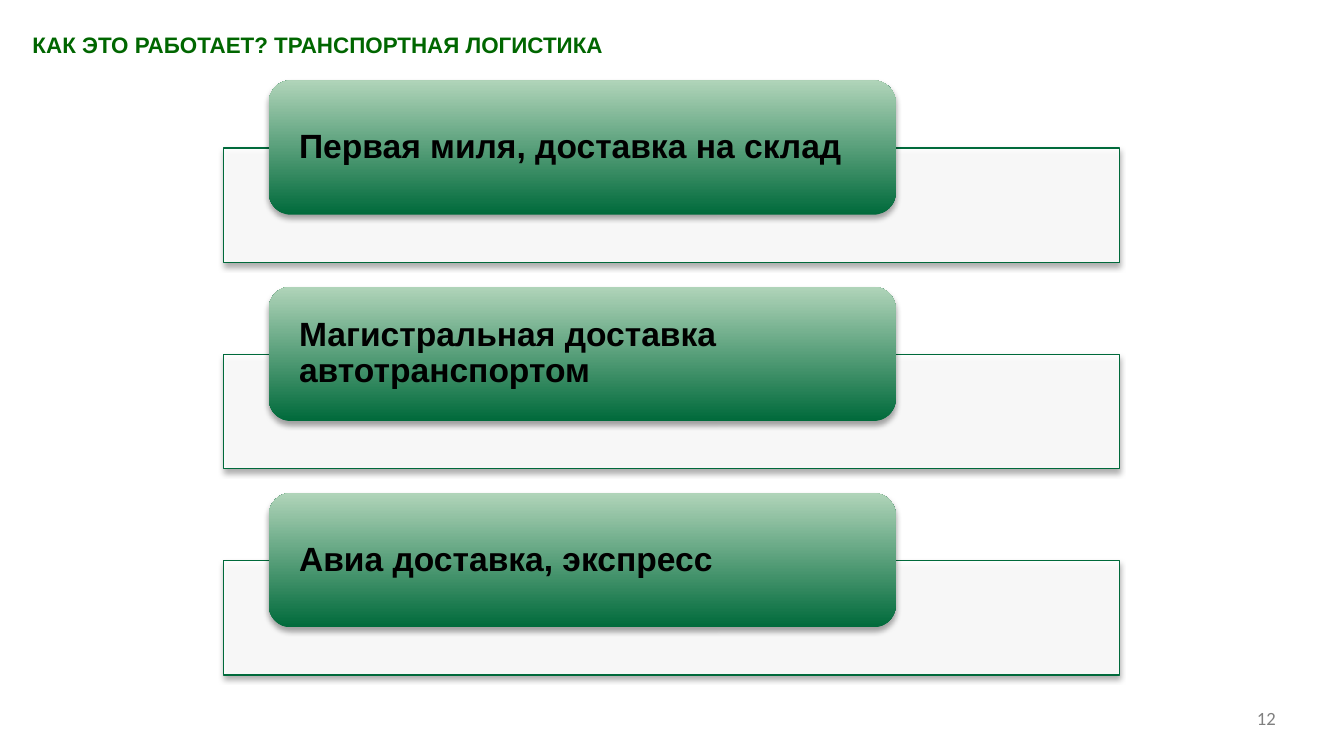
from lxml import etree
from pptx import Presentation
from pptx.dml.color import RGBColor
from pptx.enum.shapes import MSO_SHAPE
from pptx.enum.text import MSO_ANCHOR, MSO_AUTO_SIZE, PP_ALIGN
from pptx.oxml.ns import qn
from pptx.util import Cm, Pt

RECT, ROUND = MSO_SHAPE.RECTANGLE, MSO_SHAPE.ROUNDED_RECTANGLE
LEFT, RIGHT = PP_ALIGN.LEFT, PP_ALIGN.RIGHT
TOP, MIDDLE = MSO_ANCHOR.TOP, MSO_ANCHOR.MIDDLE
FIXED = MSO_AUTO_SIZE.NONE

TITLE = "КАК ЭТО РАБОТАЕТ? ТРАНСПОРТНАЯ ЛОГИСТИКА"
STEPS = [
    "Первая миля, доставка на склад",
    "Магистральная доставка автотранспортом",
    "Авиа доставка, экспресс",
]
PAGE = "12"

THEME = {
    "font": "Arial", "page_font": "Calibri",
    "title": "006600", "dark": "006A3B", "light": "B0D4B9",
    "panel": "FFFFFF", "ink": "000000", "page": "808080",
    "title_size": 12, "step_size": 18, "page_size": 10,
}
FIRST, PITCH, DROP = 1.52, 3.9, 1.28


def color(name):
    return RGBColor.from_string(THEME[name])


def write(shape, text, size, ink, font="font", bold=False,
          align=LEFT, anchor=TOP, pad=None, lead=None):
    frame = shape.text_frame
    frame.word_wrap = True
    frame.auto_size = FIXED
    frame.vertical_anchor = anchor
    if pad is not None:
        frame.margin_left = frame.margin_right = Cm(pad)
        frame.margin_top = frame.margin_bottom = 0
    frame.text = text
    para = frame.paragraphs[0]
    para.alignment = align
    if lead:
        para.line_spacing = lead
    style = para.runs[0].font
    style.name, style.size, style.bold = THEME[font], Pt(THEME[size]), bold
    style.color.rgb = color(ink)


def shade(shape):
    shape.shadow.inherit = False
    effects = shape._element.spPr.find(qn("a:effectLst"))
    outer = etree.SubElement(
        effects, qn("a:outerShdw"), blurRad=str(Pt(3.1)), dist=str(Pt(1.8)),
        dir="5400000", rotWithShape="0")
    tint = etree.SubElement(outer, qn("a:srgbClr"), val=THEME["ink"])
    etree.SubElement(tint, qn("a:alpha"), val="35000")


def add_box(slide, kind, *box):
    shape = slide.shapes.add_shape(kind, *map(Cm, box))
    shade(shape)
    return shape


def add_step(slide, text, top):
    panel = add_box(slide, RECT, 4.23, top + DROP, 16.93, 2.16)
    panel.fill.solid()
    panel.fill.fore_color.rgb = color("panel")
    tint = panel._element.spPr.find(qn("a:solidFill"))[0]
    etree.SubElement(tint, qn("a:alpha"), val="90000")
    panel.line.color.rgb = color("dark")
    panel.line.width = Pt(0.75)

    card = add_box(slide, ROUND, 5.08, top, 11.85, 2.54)
    card.fill.gradient()
    card.fill.gradient_angle = 90
    for stop, name in zip(card.fill.gradient_stops, ("dark", "light")):
        stop.color.rgb = color(name)
    card.line.fill.background()
    write(card, text, "step_size", "ink", bold=True, anchor=MIDDLE,
          pad=0.45, lead=0.9)


def main():
    deck = Presentation()
    deck.slide_width, deck.slide_height = Cm(25.4), Cm(14.29)
    slide = deck.slides.add_slide(deck.slide_layouts[5])

    title = slide.shapes.title
    title.left, title.top, title.width, title.height = map(
        Cm, (0.36, 0.46, 17.25, 1.27))
    write(title, TITLE, "title_size", "title", bold=True)

    for i, text in enumerate(STEPS):
        add_step(slide, text, FIRST + i * PITCH)

    page = slide.shapes.add_textbox(*map(Cm, (21.26, 13.23, 3.1, 0.76)))
    write(page, PAGE, "page_size", "page", font="page_font", align=RIGHT)
    deck.save("out.pptx")


if __name__ == "__main__":
    main()
